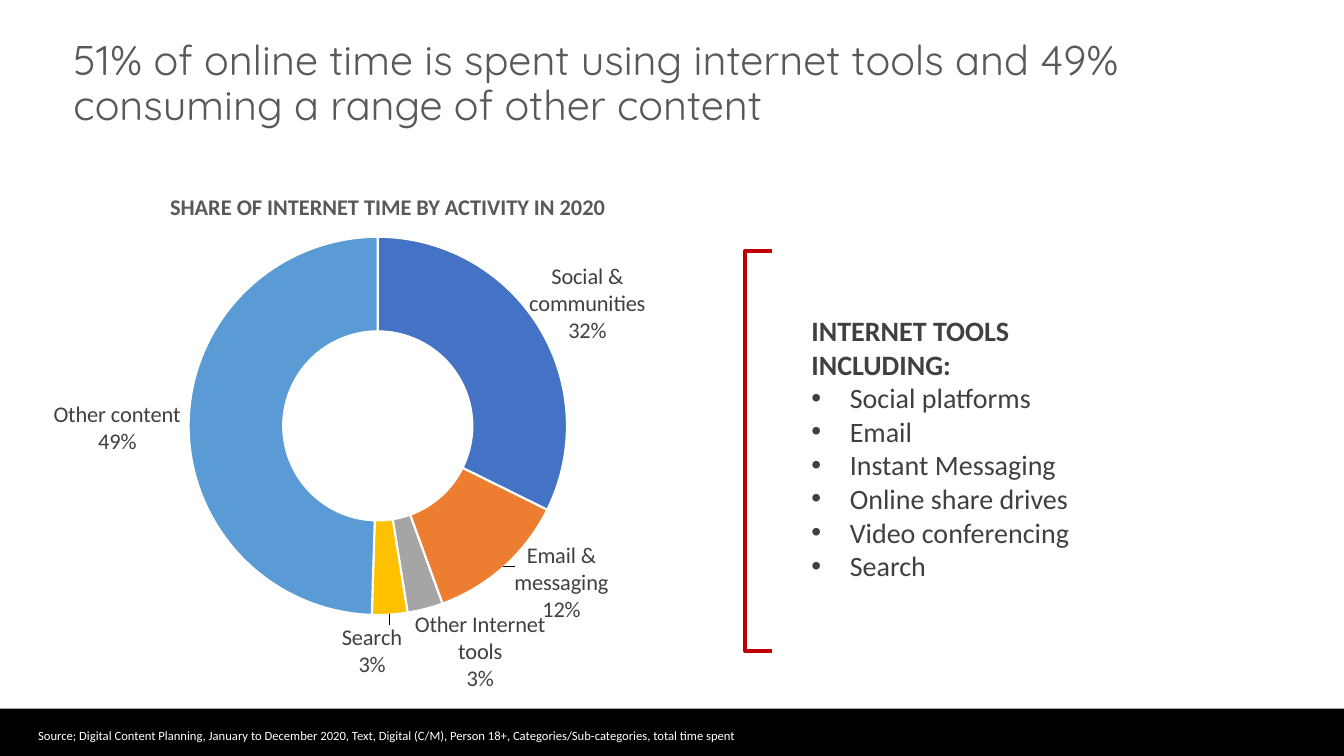
from copy import deepcopy
from dataclasses import dataclass

from lxml import etree
from pptx import Presentation
from pptx.chart.data import CategoryChartData
from pptx.dml.color import RGBColor
from pptx.enum.chart import XL_CHART_TYPE
from pptx.enum.shapes import MSO_SHAPE
from pptx.enum.text import MSO_ANCHOR, PP_ALIGN
from pptx.oxml.ns import qn
from pptx.util import Emu, Inches, Pt

DOUGHNUT = XL_CHART_TYPE.DOUGHNUT
RECT = MSO_SHAPE.RECTANGLE
BRACKET = MSO_SHAPE.RIGHT_BRACKET
LEFT, CENTER = PP_ALIGN.LEFT, PP_ALIGN.CENTER
TOP, MIDDLE = MSO_ANCHOR.TOP, MSO_ANCHOR.MIDDLE
SLIDE_W, SLIDE_H = Inches(13.33), Inches(7.5)


@dataclass(frozen=True)
class Theme:
    heading: str = "595959"
    body: str = "404040"
    bracket: str = "C00000"
    bar: str = "000000"
    light: str = "FFFFFF"
    title_font: str = "Quicksand"
    font: str = "Calibri"
    title_size: float = 29.6
    list_size: float = 20
    label_size: float = 16
    source_size: float = 9


@dataclass(frozen=True)
class Box:
    """Position and size in percent of the slide."""
    x: float
    y: float
    w: float
    h: float

    def emu(self) -> tuple[Emu, Emu, Emu, Emu]:
        return (Emu(round(SLIDE_W * self.x / 100)), Emu(round(SLIDE_H * self.y / 100)),
                Emu(round(SLIDE_W * self.w / 100)), Emu(round(SLIDE_H * self.h / 100)))


@dataclass(frozen=True)
class Activity:
    """A slice, with its label shift in shares of the chart."""
    name: str
    percent: int
    color: str
    dx: float
    dy: float


@dataclass(frozen=True)
class Line:
    text: str
    bold: bool = False
    bullet: bool = False


THEME = Theme()
ACTIVITIES = [
    Activity("Social & communities", 32, "4472C4", 0.12, -0.1),
    Activity("Email & messaging", 12, "ED7D31", 0.12, 0.11),
    Activity("Other Internet tools", 3, "A5A5A5", 0.09, 0.19),
    Activity("Search", 3, "FFC000", -0.02, 0.18),
    Activity("Other content", 49, "5B9BD5", -0.16, 0.01),
]
TOOLS = ["Social platforms", "Email", "Instant Messaging", "Online share drives",
         "Video conferencing", "Search"]


def rgb(color: str) -> RGBColor:
    return RGBColor.from_string(color)


def add_text(slide, box: Box, lines: list[Line], *, size: float, color: str,
             font: str = THEME.font, align=LEFT, anchor=TOP, spacing: float = 1.0) -> None:
    tf = slide.shapes.add_textbox(*box.emu()).text_frame
    tf.word_wrap = True
    tf.vertical_anchor = anchor
    for i, line in enumerate(lines):
        p = tf.paragraphs[0] if i == 0 else tf.add_paragraph()
        p.alignment, p.line_spacing = align, spacing
        if line.bullet:
            pPr = p._p.get_or_add_pPr()
            pPr.set("marL", str(Inches(0.38)))
            pPr.set("indent", str(-Inches(0.38)))
            etree.SubElement(pPr, qn("a:buFont")).set("typeface", "Arial")
            etree.SubElement(pPr, qn("a:buChar")).set("char", "•")
        r = p.add_run()
        r.text = line.text
        r.font.name, r.font.size, r.font.bold = font, Pt(size), line.bold
        r.font.color.rgb = rgb(color)


def add_bar(slide, box: Box) -> None:
    sp = slide.shapes.add_shape(RECT, *box.emu())
    sp.shadow.inherit = False
    sp.fill.solid()
    sp.fill.fore_color.rgb = rgb(THEME.bar)
    sp.line.fill.background()


def add_bracket(slide, box: Box) -> None:
    sp = slide.shapes.add_shape(BRACKET, *box.emu())
    sp.adjustments[0] = 0
    sp.rotation = 180
    sp.shadow.inherit = False
    sp.fill.background()
    sp.line.color.rgb = rgb(THEME.bracket)
    sp.line.width = Pt(3)


def add_values(parent, **values) -> None:
    for tag, val in values.items():
        etree.SubElement(parent, qn(f"c:{tag}")).set("val", str(val))


def add_layout(parent, **values) -> None:
    layout = etree.SubElement(parent, qn("c:layout"))
    add_values(etree.SubElement(layout, qn("c:manualLayout")), **values)


def add_label(dLbls, idx: int, activity: Activity) -> None:
    dLbl = etree.Element(qn("c:dLbl"))
    add_values(dLbl, idx=idx)
    add_layout(dLbl, x=activity.dx, y=activity.dy)
    for tag in ("c:numFmt", "c:txPr"):
        dLbl.append(deepcopy(dLbls.find(qn(tag))))
    add_values(dLbl, showLegendKey=0, showVal=0, showCatName=1, showSerName=0,
               showPercent=1, showBubbleSize=0)
    etree.SubElement(dLbl, qn("c:separator")).text = "\n"
    dLbls.insert(idx, dLbl)


def add_doughnut(slide, box: Box, activities: list[Activity]) -> None:
    data = CategoryChartData()
    data.categories = [a.name for a in activities]
    data.add_series("Series 1", [a.percent for a in activities])
    chart = slide.shapes.add_chart(DOUGHNUT, *box.emu(), data).chart
    chart.has_legend = chart.has_title = False
    chart.font.name, chart.font.size = THEME.font, Pt(10)
    plot = chart.plots[0]
    plot.vary_by_categories = True
    plot._element.find(qn("c:holeSize")).set("val", "50")
    series = plot.series[0]
    labels = series.data_labels
    labels.show_percentage = labels.show_category_name = True
    labels.show_value = False
    labels.number_format, labels.number_format_is_linked = "0%", False
    labels.font.name, labels.font.size = THEME.font, Pt(THEME.label_size)
    labels.font.color.rgb = rgb(THEME.body)
    for i, activity in enumerate(activities):
        fmt = series.points[i].format
        fmt.fill.solid()
        fmt.fill.fore_color.rgb = rgb(activity.color)
        fmt.line.color.rgb = rgb(THEME.light)
        fmt.line.width = Pt(1.5)
        add_label(labels._element, i, activity)
    area = plot._element.getparent()
    for old in area.findall(qn("c:layout")):
        area.remove(old)
    add_layout(area, layoutTarget="inner", xMode="edge", yMode="edge",
               x=0.25, y=0.015, w=0.51, h=0.807)
    area.insert(0, area[-1])


def main() -> None:
    prs = Presentation()
    prs.slide_width, prs.slide_height = SLIDE_W, SLIDE_H
    slide = prs.slides.add_slide(prs.slide_layouts[6])
    add_bar(slide, Box(0, 93.73, 100, 6.27))
    add_doughnut(slide, Box(0.23, 30.4, 55.21, 62), ACTIVITIES)
    add_text(slide, Box(0.23, 24.93, 57.24, 4.93),
             [Line("SHARE OF INTERNET TIME BY ACTIVITY IN 2020", bold=True)],
             size=THEME.label_size, color=THEME.heading, align=CENTER)
    add_text(slide, Box(4.73, 3.2, 82.15, 15.87),
             [Line("51% of online time is spent using internet tools and 49% "
                   "consuming a range of other content")],
             size=THEME.title_size, color=THEME.heading, font=THEME.title_font,
             anchor=MIDDLE, spacing=0.9)
    add_bracket(slide, Box(55.44, 33.2, 2.03, 52.93))
    add_text(slide, Box(59.64, 40.8, 24.98, 37.2),
             [Line("INTERNET TOOLS INCLUDING:", bold=True)]
             + [Line(tool, bullet=True) for tool in TOOLS],
             size=THEME.list_size, color=THEME.body)
    add_text(slide, Box(2.1, 95.6, 59.04, 3.33),
             [Line("Source; Digital Content Planning, January to December 2020, Text, "
                   "Digital (C/M), Person 18+, Categories/Sub-categories, total time spent")],
             size=THEME.source_size, color=THEME.light)
    prs.save("out.pptx")


if __name__ == "__main__":
    main()
